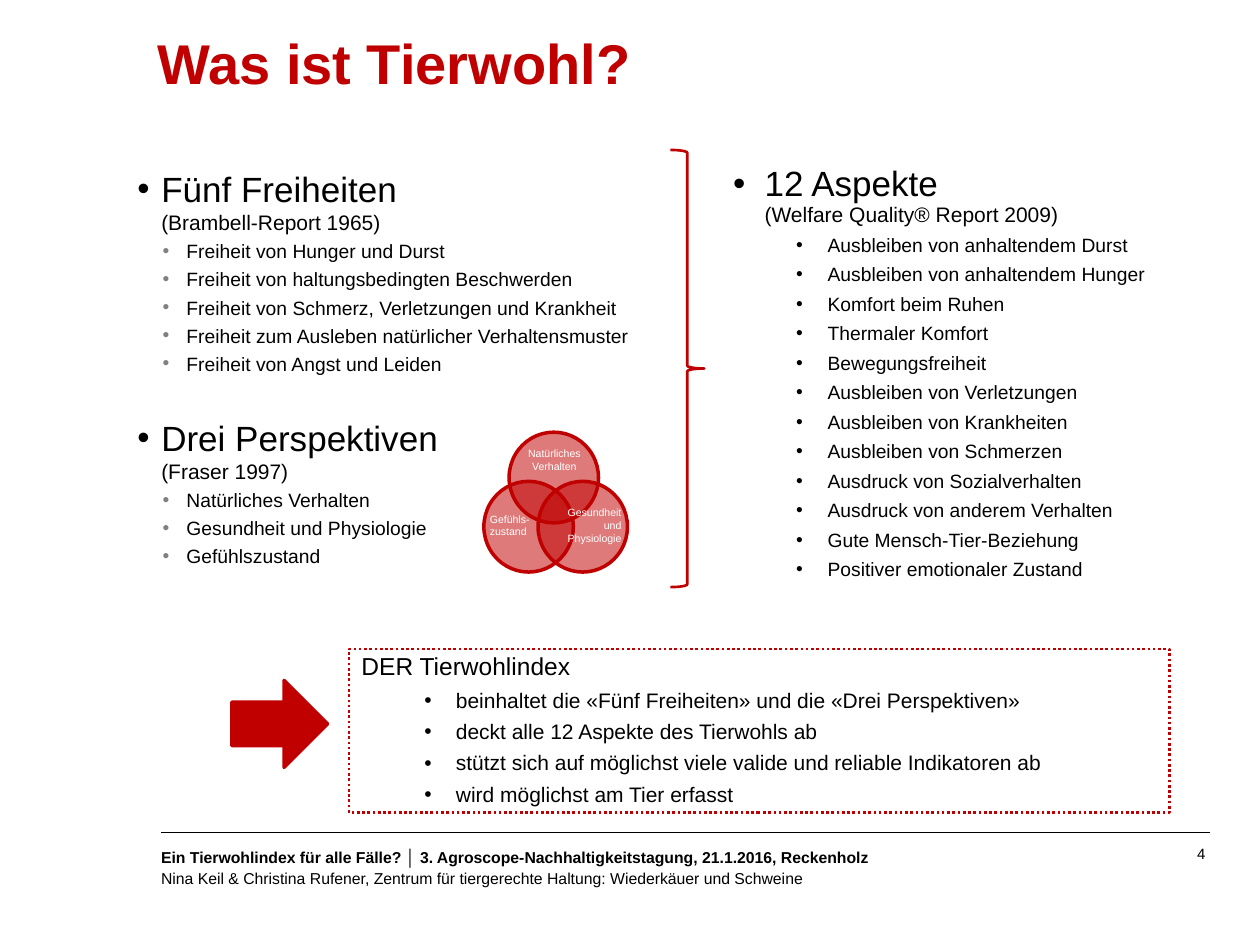
from lxml.etree import SubElement
from pptx import Presentation
from pptx.dml.color import RGBColor
from pptx.enum.dml import MSO_LINE_DASH_STYLE as Dash
from pptx.enum.shapes import MSO_CONNECTOR, MSO_SHAPE as Shape
from pptx.enum.text import MSO_ANCHOR as Anchor, PP_ALIGN as Align
from pptx.oxml.ns import qn
from pptx.util import Inches, Pt

RED, BLACK, WHITE, GRAY = "C00000", "000000", "FFFFFF", "808080"

FREEDOMS = [
    "Freiheit von Hunger und Durst",
    "Freiheit von haltungsbedingten Beschwerden",
    "Freiheit von Schmerz, Verletzungen und Krankheit",
    "Freiheit zum Ausleben natürlicher Verhaltensmuster",
    "Freiheit von Angst und Leiden",
]
PERSPECTIVES = ["Natürliches Verhalten", "Gesundheit und Physiologie", "Gefühlszustand"]
ASPECTS = [
    "Ausbleiben von anhaltendem Durst",
    "Ausbleiben von anhaltendem Hunger",
    "Komfort beim Ruhen",
    "Thermaler Komfort",
    "Bewegungsfreiheit",
    "Ausbleiben von Verletzungen",
    "Ausbleiben von Krankheiten",
    "Ausbleiben von Schmerzen",
    "Ausdruck von Sozialverhalten",
    "Ausdruck von anderem Verhalten",
    "Gute Mensch-Tier-Beziehung",
    "Positiver emotionaler Zustand",
]
INDEX_POINTS = [
    "beinhaltet die «Fünf Freiheiten» und die «Drei Perspektiven»",
    "deckt alle 12 Aspekte des Tierwohls ab",
    "stützt sich auf möglichst viele valide und reliable Indikatoren ab",
    "wird möglichst am Tier erfasst",
]


def rgb(color):
    """Turn a hex string into a colour."""
    return RGBColor.from_string(color)


def style(font, size, color=BLACK, bold=False):
    """Set the typeface, size, colour and weight of a font."""
    font.name, font.size, font.bold = "Arial", Pt(size), bold
    font.color.rgb = rgb(color)


def add_bullet(paragraph, margin, hang, color=None):
    """Give a paragraph a hanging round bullet."""
    properties = paragraph._p.get_or_add_pPr()
    properties.set("marL", str(Inches(margin)))
    properties.set("indent", str(-Inches(hang)))
    if color:
        SubElement(SubElement(properties, qn("a:buClr")), qn("a:srgbClr"), val=color)
    SubElement(properties, qn("a:buFont"), typeface="Arial")
    SubElement(properties, qn("a:buChar"), char="•")


def next_paragraph(frame, before=0, spacing=None, level=0, align=Align.LEFT):
    """Return the empty first paragraph or a new one, with its spacing set."""
    first = frame.paragraphs[0]
    is_first = not first.runs
    paragraph = first if is_first else frame.add_paragraph()
    paragraph.level, paragraph.alignment = level, align
    paragraph.space_before = Pt(0 if is_first else before)
    if spacing:
        paragraph.line_spacing = spacing
    return paragraph


def add_text(shapes, box, inset=True):
    """Add a wrapping text box and return its frame."""
    frame = shapes.add_textbox(*map(Inches, box)).text_frame
    frame.word_wrap = True
    if not inset:
        frame.margin_left = frame.margin_top = frame.margin_right = frame.margin_bottom = 0
    return frame


def add_heading(frame, heading, source, hang, before=0, spacing=None):
    """Add a bulleted heading with its source on the line below."""
    paragraph = next_paragraph(frame, before, spacing)
    add_bullet(paragraph, hang, hang)
    style(paragraph.font, 20)
    style_run = paragraph.add_run()
    style_run.text = heading
    style(style_run.font, 20)
    paragraph.add_line_break()
    source_run = paragraph.add_run()
    source_run.text = source
    style(source_run.font, 12)


def add_items(frame, items, size, margin, hang, before, spacing=None, color=None):
    """Add second-level bulleted items."""
    for item in items:
        paragraph = next_paragraph(frame, before, spacing, level=1)
        add_bullet(paragraph, margin, hang, color)
        paragraph.add_run().text = item
        style(paragraph.font, size)


def add_red_shape(shapes, kind, box, width, filled=False, opacity=None):
    """Add a red-lined shape, filled in red if asked."""
    shape = shapes.add_shape(kind, *map(Inches, box))
    shape.shadow.inherit = False
    shape.line.color.rgb = rgb(RED)
    shape.line.width = Pt(width)
    if filled:
        shape.fill.solid()
        shape.fill.fore_color.rgb = rgb(RED)
    else:
        shape.fill.background()
    if opacity:
        tint = shape.fill._xPr.find(qn("a:solidFill")).find(qn("a:srgbClr"))
        SubElement(tint, qn("a:alpha"), val=str(opacity * 1000))
    return shape


def add_title(slide):
    """Fill and place the title."""
    title = slide.shapes.title
    title.left, title.top, title.width, title.height = map(Inches, (1.25, 0.29, 8.72, 1.08))
    frame = title.text_frame
    frame.margin_left = frame.margin_top = frame.margin_right = frame.margin_bottom = 0
    frame.vertical_anchor = Anchor.TOP
    paragraph = next_paragraph(frame, spacing=0.9)
    paragraph.add_run().text = "Was ist Tierwohl?"
    style(paragraph.font, 32, RED, bold=True)


def add_footer(shapes):
    """Add the rule, the footer lines and the page number."""
    rule = shapes.add_connector(
        MSO_CONNECTOR.STRAIGHT, Inches(9.6), Inches(6.61), Inches(1.28), Inches(6.61))
    rule.line.color.rgb = rgb(BLACK)
    rule.line.width = Pt(0.75)
    SubElement(rule._element.spPr, qn("a:effectLst"))

    number = next_paragraph(
        add_text(shapes, (7.12, 6.7, 2.48, 0.14), inset=False), spacing=1.05, align=Align.RIGHT)
    number.add_run().text = "4 "
    style(number.font, 8.5)

    frame = add_text(shapes, (1.18, 6.66, 6.78, 0.44))
    for line, bold in (
        ("Ein Tierwohlindex für alle Fälle? │ 3. Agroscope-Nachhaltigkeitstagung, "
         "21.1.2016, Reckenholz", True),
        ("Nina Keil & Christina Rufener, Zentrum für tiergerechte Haltung: "
         "Wiederkäuer und Schweine", False),
    ):
        paragraph = next_paragraph(frame, spacing=Pt(12))
        paragraph.add_run().text = line
        style(paragraph.font, 9, bold=bold)


def add_concepts(shapes):
    """Add the two lists on the left and the list of aspects on the right."""
    left = add_text(shapes, (1.09, 1.33, 4.57, 5.25), inset=False)
    for heading, source, items in (
        ("Fünf Freiheiten", "(Brambell-Report 1965)", FREEDOMS),
        ("Drei Perspektiven", "(Fraser 1997)", PERSPECTIVES),
    ):
        add_heading(left, heading, source, 0.19, before=23.5)
        add_items(left, items, 11, 0.39, 0.19, before=2.8, color=GRAY)

    right = add_text(shapes, (5.72, 1.27, 4.17, 5.27))
    add_heading(right, "12 Aspekte", "(Welfare Quality® Report 2009)", 0.25, spacing=0.9)
    add_items(right, ASPECTS, 11, 0.75, 0.25, before=5, spacing=0.9)
    add_red_shape(shapes, Shape.RIGHT_BRACE, (5.32, 1.19, 0.27, 3.47), 1.5)


def add_index(shapes):
    """Add the arrow and the dotted box about the index."""
    box = add_red_shape(shapes, Shape.RECTANGLE, (2.77, 5.15, 6.51, 1.3), 1.5)
    box.line.dash_style = Dash.ROUND_DOT
    frame = box.text_frame
    frame.vertical_anchor = Anchor.MIDDLE
    heading = next_paragraph(frame, spacing=0.9)
    heading.add_run().text = "DER Tierwohlindex"
    style(heading.font, 14)
    add_items(frame, INDEX_POINTS, 12, 0.75, 0.25, before=5, spacing=0.9)
    add_red_shape(shapes, Shape.RIGHT_ARROW, (1.84, 5.4, 0.76, 0.69), 2, filled=True)


def add_venn(slide_shapes):
    """Add the three overlapping circles with their labels."""
    shapes = slide_shapes.add_group_shape().shapes
    for left, top in ((4.04, 3.43), (4.27, 3.82), (3.84, 3.82)):
        add_red_shape(shapes, Shape.OVAL, (left, top, 0.71, 0.72), 2, filled=True, opacity=52)
    for lines, box, align in (
        (["Gesundheit", "und", "Physiologie"], (4.31, 3.97, 0.72, 0.4), Align.RIGHT),
        (["Gefühls-zustand"], (3.79, 4.02, 0.53, 0.3), Align.LEFT),
        (["Natürliches Verhalten"], (4.08, 3.5, 0.64, 0.3), Align.CENTER),
    ):
        frame = add_text(shapes, box)
        for line in lines:
            paragraph = next_paragraph(frame, align=align)
            paragraph.add_run().text = line
            style(paragraph.font, 6, WHITE)


def main():
    """Build the slide and save it."""
    deck = Presentation()
    deck.slide_width, deck.slide_height = Inches(10), Inches(7.5)
    slide = deck.slides.add_slide(deck.slide_layouts[5])
    add_title(slide)
    for add_part in (add_footer, add_concepts, add_index, add_venn):
        add_part(slide.shapes)
    deck.save("out.pptx")


if __name__ == "__main__":
    main()
